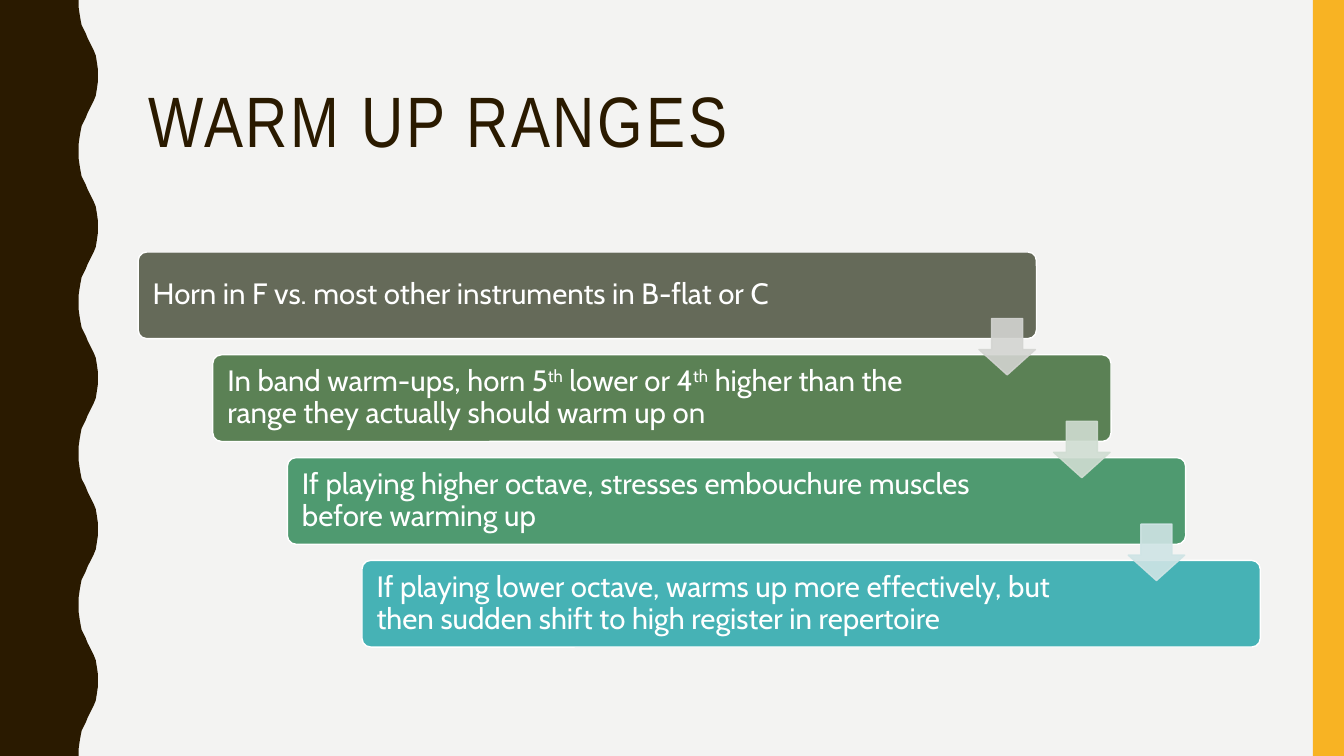
from lxml.etree import SubElement
from pptx import Presentation
from pptx.dml.color import RGBColor
from pptx.enum.shapes import MSO_SHAPE as Shape
from pptx.enum.text import MSO_ANCHOR as Anchor, PP_ALIGN as Align
from pptx.oxml.ns import qn
from pptx.util import Inches, Pt

PAPER = RGBColor(0xF3, 0xF3, 0xF2)
BROWN = RGBColor(0x2A, 0x1A, 0x00)
GOLD = RGBColor(0xF8, 0xB3, 0x23)
WHITE = RGBColor(0xFF, 0xFF, 0xFF)

# Each step: bar colour, then text pieces; every second piece is raised.
STEPS = [
    (RGBColor(0x65, 0x6A, 0x59),
     ["Horn in F vs. most other instruments in B-flat or C"]),
    (RGBColor(0x5B, 0x81, 0x55),
     ["In band warm-ups, horn 5", "th", " lower or 4", "th",
      " higher than the range they actually should warm up on"]),
    (RGBColor(0x4F, 0x9A, 0x70),
     ["If playing higher octave, stresses embouchure muscles before warming up"]),
    (RGBColor(0x46, 0xB2, 0xB5),
     ["If playing lower octave, warms up more effectively, but then "
      "sudden shift to high register in repertoire"]),
]
ARROWS = [RGBColor(0xD3, 0xD4, 0xD1), RGBColor(0xD0, 0xDD, 0xD2),
          RGBColor(0xCF, 0xE4, 0xE5)]

LEFT, TOP = 1.37, 2.5
STEP_X, STEP_Y = 0.74, 1.02
BAR_W, BAR_H = 8.91, 0.86
ARROW_X, ARROW_Y, ARROW_SIZE = 8.34, 0.66, 0.56

# Half a wave, from trough to crest, as (x, y).
HALF = [(0.78, 0), (0.78, 0.07), (0.79, 0.14), (0.8, 0.2), (0.81, 0.25),
        (0.83, 0.29), (0.85, 0.33), (0.87, 0.38), (0.89, 0.42), (0.91, 0.46),
        (0.93, 0.5), (0.95, 0.55), (0.96, 0.61), (0.97, 0.68), (0.97, 0.75)]
PERIOD, WAVES = 1.5, 5

BAR_FRAME = dict(word_wrap=True, vertical_anchor=Anchor.MIDDLE,
                 margin_left=Inches(0.12), margin_right=Inches(1.43),
                 margin_top=Inches(0.09), margin_bottom=Inches(0.09))
TITLE_FRAME = dict(word_wrap=True, vertical_anchor=Anchor.MIDDLE)
PARA = dict(alignment=Align.LEFT, line_spacing=0.9)
BAR_FONT = dict(name="Cabin", size=Pt(21))
TITLE_FONT = dict(name="Arial Narrow", size=Pt(51))


def assign(item, values):
    for key, value in values.items():
        setattr(item, key, value)


def paint(shape, color, edge=None):
    shape.shadow.inherit = False
    shape.fill.solid()
    shape.fill.fore_color.rgb = color
    if edge is None:
        shape.line.fill.background()
    else:
        shape.line.color.rgb = edge
        shape.line.width = Pt(1)


def add_shape(slide, kind, box, color, edge=None, adjust=()):
    shape = slide.shapes.add_shape(kind, *map(Inches, box))
    for i, value in enumerate(adjust):
        shape.adjustments[i] = value
    paint(shape, color, edge)
    return shape


def add_wave(slide):
    wave = HALF + [(x, PERIOD - y) for x, y in HALF[-2::-1]]
    edge = [(x, y + n * PERIOD) for n in range(WAVES) for x, y in wave]
    points = [(Inches(x), Inches(y)) for x, y in edge + [(0, PERIOD * WAVES)]]
    builder = slide.shapes.build_freeform(0, 0)
    builder.add_line_segments(points, close=True)
    paint(builder.convert_to_shape(), BROWN)


def add_title(slide, text):
    title = slide.shapes.title
    assign(title, dict(left=Inches(LEFT), top=Inches(0.42),
                       width=Inches(11.13), height=Inches(1.63)))
    frame = title.text_frame
    assign(frame, TITLE_FRAME)
    para = frame.paragraphs[0]
    assign(para, PARA)
    run = para.add_run()
    run.text = text
    assign(run.font, TITLE_FONT)
    run.font.color.rgb = BROWN
    run._r.get_or_add_rPr().set("spc", "200")


def add_bar(slide, left, top, color, pieces):
    bar = add_shape(slide, Shape.ROUNDED_RECTANGLE, (left, top, BAR_W, BAR_H),
                    color, WHITE, [0.1])
    assign(bar.text_frame, BAR_FRAME)
    para = bar.text_frame.paragraphs[0]
    assign(para, PARA)
    for i, piece in enumerate(pieces):
        run = para.add_run()
        run.text = piece
        assign(run.font, BAR_FONT)
        run.font.color.rgb = WHITE
        if i % 2:
            run._r.get_or_add_rPr().set("baseline", "30000")


def add_arrow(slide, left, top, color):
    """Add a slightly see-through arrow to the next bar."""
    arrow = add_shape(slide, Shape.DOWN_ARROW,
                      (left, top, ARROW_SIZE, ARROW_SIZE),
                      color, color, [0.55, 0.45])
    for tone in arrow._element.spPr.iter(qn("a:srgbClr")):
        SubElement(tone, qn("a:alpha")).set("val", "90000")


def main():
    deck = Presentation()
    deck.slide_width, deck.slide_height = Inches(13.33), Inches(7.5)
    slide = deck.slides.add_slide(deck.slide_layouts[5])
    slide.background.fill.solid()
    slide.background.fill.fore_color.rgb = PAPER

    add_wave(slide)
    add_shape(slide, Shape.RECTANGLE, (13.02, 0, 0.31, 7.5), GOLD)
    add_title(slide, "WARM UP RANGES")
    for i, (color, pieces) in enumerate(STEPS):
        add_bar(slide, LEFT + i * STEP_X, TOP + i * STEP_Y, color, pieces)
    for i, color in enumerate(ARROWS):
        add_arrow(slide, LEFT + ARROW_X + i * STEP_X,
                  TOP + ARROW_Y + i * STEP_Y, color)
    deck.save("out.pptx")


if __name__ == "__main__":
    main()
